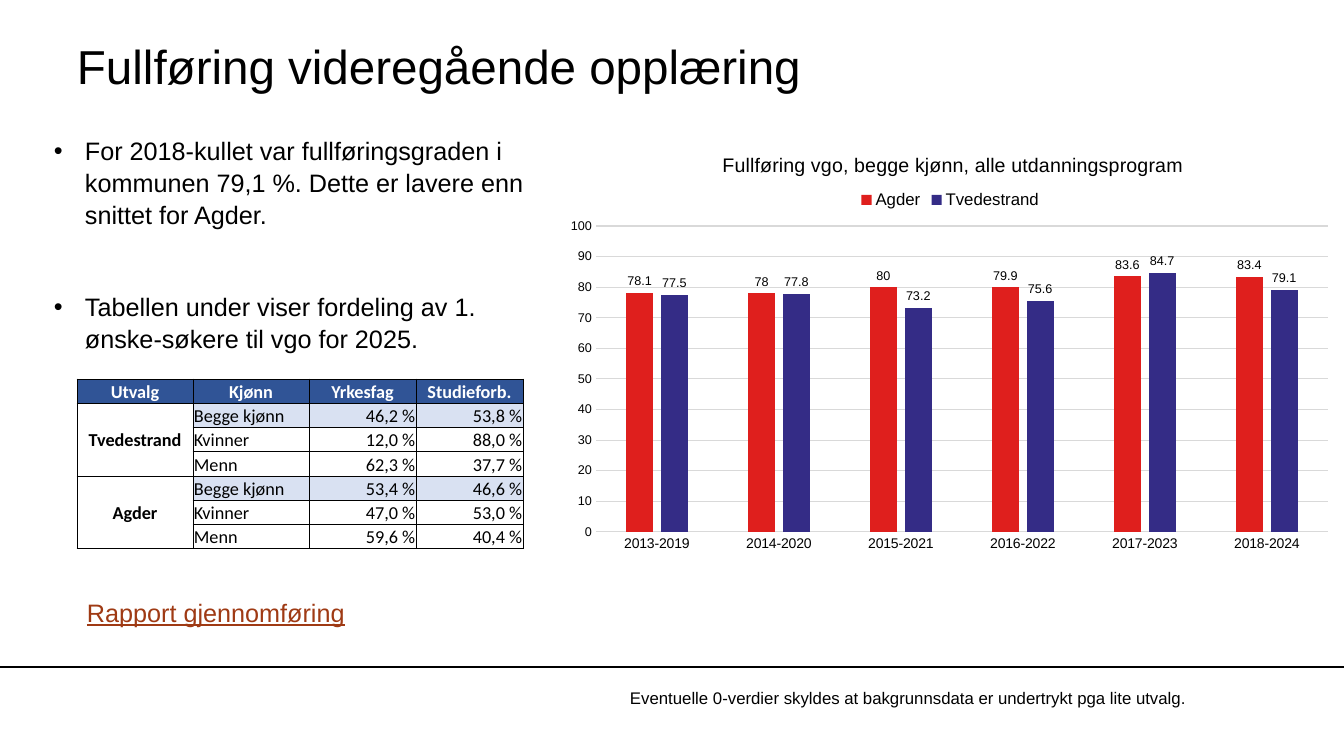
from lxml import etree
from pptx import Presentation
from pptx.chart.data import CategoryChartData
from pptx.dml.color import RGBColor
from pptx.enum.chart import XL_CHART_TYPE, XL_LABEL_POSITION, XL_LEGEND_POSITION, XL_TICK_MARK
from pptx.enum.shapes import MSO_CONNECTOR
from pptx.enum.text import MSO_ANCHOR, PP_ALIGN
from pptx.oxml import parse_xml
from pptx.oxml.ns import nsdecls, qn
from pptx.util import Pt

PX = 914400 / 100.8
COLORS = {
    "text": "000000", "white": "FFFFFF", "link": "9F3A14", "grid": "D9D9D9",
    "header": "305496", "total": "D9E1F2", "Agder": "DF1F1D", "Tvedestrand": "342C86",
}
BULLETS = [
    "For 2018-kullet var fullføringsgraden i kommunen 79,1 %. Dette er lavere enn snittet for Agder.",
    "Tabellen under viser fordeling av 1. ønske-søkere til vgo for 2025.",
]
TABLE_HEADER = ["Utvalg", "Kjønn", "Yrkesfag", "Studieforb."]
GENDERS = ["Begge kjønn", "Kvinner", "Menn"]
APPLICANTS = {
    "Tvedestrand": [("46,2 %", "53,8 %"), ("12,0 %", "88,0 %"), ("62,3 %", "37,7 %")],
    "Agder": [("53,4 %", "46,6 %"), ("47,0 %", "53,0 %"), ("59,6 %", "40,4 %")],
}
COHORTS = [f"{year}-{year + 6}" for year in range(2013, 2019)]
COMPLETION = {
    "Agder": [78.1, 78, 80, 79.9, 83.6, 83.4],
    "Tvedestrand": [77.5, 77.8, 73.2, 75.6, 84.7, 79.1],
}


def px(length):
    return round(length * PX)


def rgb(name):
    return RGBColor.from_string(COLORS[name])


def set_attributes(target, **values):
    for name, value in values.items():
        setattr(target, name, value)


def set_font(font, size, color="text", name="Arial", bold=False, underline=None):
    set_attributes(font, size=Pt(size), name=name, bold=bold, underline=underline)
    font.color.rgb = rgb(color)


def set_line(line, color, width):
    line.color.rgb = rgb(color)
    line.width = Pt(width)


def add_text(slide, box, paragraphs, size, color="text", underline=None,
             margins=(10, 5), anchor=MSO_ANCHOR.TOP):
    shape = slide.shapes.add_textbox(*map(px, box))
    frame = shape.text_frame
    side, end = map(px, margins)
    set_attributes(frame, word_wrap=True, vertical_anchor=anchor, margin_left=side,
                   margin_right=side, margin_top=end, margin_bottom=end)
    frame.text = "\n".join(paragraphs)
    for paragraph in frame.paragraphs:
        set_font(paragraph.runs[0].font, size, color, underline=underline)
    return frame


def add_bullets(slide, box):
    frame = add_text(slide, box, BULLETS, 18)
    for index, paragraph in enumerate(frame.paragraphs):
        paragraph.line_spacing = 1.05
        if index:
            paragraph.space_before = Pt(43.5)
        properties = paragraph._p.get_or_add_pPr()
        properties.set("marL", str(px(31)))
        properties.set("indent", str(px(-31)))
        etree.SubElement(properties, qn("a:buFont"), typeface="Arial")
        etree.SubElement(properties, qn("a:buChar"), char="•")


def style_cell(cell, text, fill, align, color="text", bold=False, anchor=MSO_ANCHOR.BOTTOM):
    set_attributes(cell, text=text, vertical_anchor=anchor, margin_left=px(1),
                   margin_right=px(1), margin_top=px(1), margin_bottom=0)
    paragraph = cell.text_frame.paragraphs[0]
    paragraph.alignment = align
    set_font(paragraph.runs[0].font, 13, color, "Calibri", bold)
    cell.fill.solid()
    cell.fill.fore_color.rgb = rgb(fill)


def add_borders(cell):
    properties = cell._tc.get_or_add_tcPr()
    for index, side in enumerate(("lnL", "lnR", "lnT", "lnB")):
        properties.insert(index, parse_xml(
            f'<a:{side} {nsdecls("a")} w="{Pt(0.5)}"><a:solidFill>'
            f'<a:srgbClr val="{COLORS["text"]}"/></a:solidFill></a:{side}>'))


def add_applicant_table(slide, box):
    row_count = 1 + len(APPLICANTS) * len(GENDERS)
    table = slide.shapes.add_table(row_count, len(TABLE_HEADER), *map(px, box)).table
    set_attributes(table, first_row=False, horz_banding=False)
    for column, width in zip(table.columns, (116, 116, 107, 107)):
        column.width = px(width)

    # Header row
    for column, text in enumerate(TABLE_HEADER):
        style_cell(table.cell(0, column), text, "header", PP_ALIGN.CENTER, "white", True)

    # One block of gender rows for each area
    for block, (area, shares) in enumerate(APPLICANTS.items()):
        top = 1 + block * len(GENDERS)
        area_cell = table.cell(top, 0)
        area_cell.merge(table.cell(top + len(GENDERS) - 1, 0))
        style_cell(area_cell, area, "white", PP_ALIGN.CENTER, bold=True, anchor=MSO_ANCHOR.MIDDLE)
        for offset, (gender, values) in enumerate(zip(GENDERS, shares)):
            fill = "white" if offset else "total"
            style_cell(table.cell(top + offset, 1), gender, fill, PP_ALIGN.LEFT)
            for column, value in enumerate(values, 2):
                style_cell(table.cell(top + offset, column), value, fill, PP_ALIGN.RIGHT)
    for cell in table.iter_cells():
        add_borders(cell)


def place_part(element, index, chart_box, left, top, width=None, height=None):
    """Fix a chart part at a px place inside the chart."""
    for old in element.findall(qn("c:layout")):
        element.remove(old)
    layout = etree.Element(qn("c:layout"))
    manual = etree.SubElement(layout, qn("c:manualLayout"))
    if width:
        etree.SubElement(manual, qn("c:layoutTarget"), val="inner")
    for mode in ("xMode", "yMode"):
        etree.SubElement(manual, qn(f"c:{mode}"), val="edge")
    full_width, full_height = chart_box[2:]
    for tag, length, full in (("x", left, full_width), ("y", top, full_height),
                              ("w", width, full_width), ("h", height, full_height)):
        if length:
            etree.SubElement(manual, qn(f"c:{tag}"), val=f"{length / full:.4f}")
    element.insert(index, layout)


def add_completion_chart(slide, box):
    data = CategoryChartData()
    data.categories = COHORTS
    for area, values in COMPLETION.items():
        data.add_series(area, values)
    chart = slide.shapes.add_chart(XL_CHART_TYPE.COLUMN_CLUSTERED, *map(px, box), data).chart
    set_font(chart.font, 10)

    # Title and legend
    title = chart.chart_title
    title.text_frame.text = "Fullføring vgo, begge kjønn, alle utdanningsprogram"
    set_font(title.text_frame.paragraphs[0].runs[0].font, 14)
    title.include_in_layout = False
    chart.has_legend = True
    set_attributes(chart.legend, position=XL_LEGEND_POSITION.TOP, include_in_layout=False)
    set_font(chart.legend.font, 12)

    # Axes
    for axis, size in ((chart.category_axis, 10), (chart.value_axis, 9)):
        set_attributes(axis, major_tick_mark=XL_TICK_MARK.NONE, minor_tick_mark=XL_TICK_MARK.NONE)
        set_font(axis.tick_labels.font, size)
    set_line(chart.category_axis.format.line, "grid", 0.75)
    value_axis = chart.value_axis
    set_attributes(value_axis, minimum_scale=0, maximum_scale=100, major_unit=10)
    set_attributes(value_axis.tick_labels, number_format="#,##0", number_format_is_linked=False)
    value_axis.format.line.fill.background()
    set_line(value_axis.major_gridlines.format.line, "grid", 0.75)

    # Columns
    plot = chart.plots[0]
    set_attributes(plot, gap_width=219, overlap=-27, vary_by_categories=False)
    for series in plot.series:
        series.format.fill.solid()
        series.format.fill.fore_color.rgb = rgb(series.name)
        labels = series.data_labels
        set_attributes(labels, show_value=True, position=XL_LABEL_POSITION.OUTSIDE_END)
        set_font(labels.font, 9)

    # Places of the parts
    place_part(title._element, 1, box, 164, 20)
    place_part(chart.legend._element, 1, box, 301, 58)
    place_part(chart._chartSpace.chart.plotArea, 0, box, 41, 97, 732, 306)


def add_footer(slide, box):
    left, top, width, _ = box
    line = slide.shapes.add_connector(
        MSO_CONNECTOR.STRAIGHT, px(left), px(top), px(left + width), px(top))
    set_line(line.line, "text", 0.75)
    etree.SubElement(line._element.spPr, qn("a:effectLst"))
    add_text(slide, (left + 620, top + 16, 590, 30),
             ["Eventuelle 0-verdier skyldes at bakgrunnsdata er undertrykt pga lite utvalg."], 12)


def main():
    presentation = Presentation()
    set_attributes(presentation, slide_width=px(1344), slide_height=px(756))
    slide = presentation.slides.add_slide(presentation.slide_layouts[6])
    add_footer(slide, (0, 667, 1344, 89))
    add_text(slide, (77, 27, 1119, 76), ["Fullføring videregående opplæring"], 34,
             margins=(0, 0), anchor=MSO_ANCHOR.MIDDLE)
    add_bullets(slide, (44, 129, 521, 224))
    add_applicant_table(slide, (77, 379, 446, 170))
    add_text(slide, (77, 592, 283, 40), ["Rapport gjennomføring"], 18, "link", underline=True)
    add_completion_chart(slide, (555, 129, 788, 431))
    presentation.save("out.pptx")


if __name__ == "__main__":
    main()
